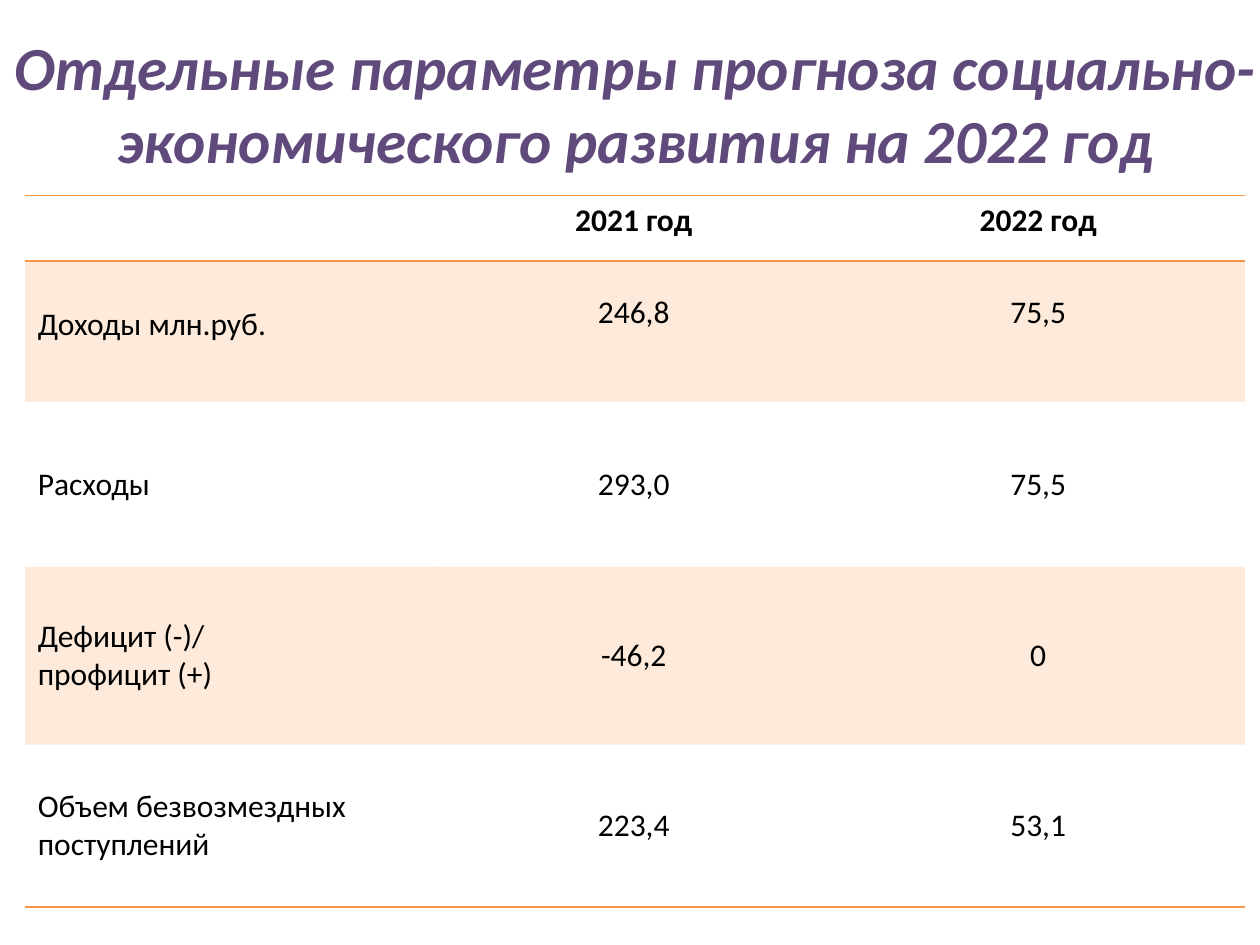
from dataclasses import dataclass

from lxml.etree import SubElement
from pptx import Presentation
from pptx.dml.color import RGBColor
from pptx.enum.text import MSO_ANCHOR, PP_ALIGN
from pptx.oxml import parse_xml
from pptx.oxml.ns import nsdecls, qn
from pptx.util import Inches, Pt


@dataclass(frozen=True)
class Theme:
    font: str = "Calibri"
    title: str = "604A7B"
    text: str = "000000"
    accent: str = "F79646"
    band_alpha: int = 20000
    title_size: int = 35
    body_size: int = 18
    rule_width: int = 1
    plain_table: str = "{2D5ABB26-0587-4C30-8999-92F81FD0307C}"


class SlideBuilder:
    def __init__(self, slide, theme):
        self.slide = slide
        self.theme = theme

    def style(self, p, size, color, align, bold=False, italic=False):
        p.alignment = align
        p.font.name = self.theme.font
        p.font.size = Pt(size)
        p.font.color.rgb = RGBColor.from_string(color)
        p.font.bold = bold
        p.font.italic = italic

    def title(self, text, x, y, w, h):
        sp = self.slide.shapes.add_textbox(Inches(x), Inches(y), Inches(w), Inches(h))
        tf = sp.text_frame
        tf.word_wrap = True
        tf.text = text
        self.style(tf.paragraphs[0], self.theme.title_size, self.theme.title,
                   PP_ALIGN.CENTER, True, True)

    def band(self, cell):
        cell.fill.solid()
        cell.fill.fore_color.rgb = RGBColor.from_string(self.theme.accent)
        color = cell.fill._xPr.find(".//" + qn("a:srgbClr"))
        SubElement(color, qn("a:alpha"), val=str(self.theme.band_alpha))

    def rules(self, cell, sides):
        tc_pr = cell._tc.get_or_add_tcPr()
        for i, side in enumerate(sides):
            tc_pr.insert(i, parse_xml(
                f'<a:ln{side} {nsdecls("a")} w="{Pt(self.theme.rule_width)}">'
                f'<a:solidFill><a:srgbClr val="{self.theme.accent}"/></a:solidFill>'
                f'</a:ln{side}>'))

    def table(self, rows, x, y, widths, heights):
        frame = self.slide.shapes.add_table(
            len(rows), len(widths), Inches(x), Inches(y),
            Inches(sum(widths)), Inches(sum(heights)))
        frame.element.find(".//" + qn("a:tableStyleId")).text = self.theme.plain_table
        table = frame.table
        for column, width in zip(table.columns, widths):
            column.width = Inches(width)
        for row, height in zip(table.rows, heights):
            row.height = Inches(height)
        rule_sides = {0: "TB", len(rows) - 1: "B"}
        for i, values in enumerate(rows):
            for j, value in enumerate(values):
                cell = table.cell(i, j)
                cell.text = value
                cell.vertical_anchor = MSO_ANCHOR.MIDDLE if i else MSO_ANCHOR.TOP
                align = PP_ALIGN.CENTER if j else PP_ALIGN.LEFT
                for p in cell.text_frame.paragraphs:
                    self.style(p, self.theme.body_size, self.theme.text, align, i == 0)
                if i % 2:
                    self.band(cell)
                else:
                    cell.fill.background()
                self.rules(cell, rule_sides.get(i, ""))
        return table


def main():
    prs = Presentation()
    prs.slide_width, prs.slide_height = Inches(10), Inches(7.5)
    s = prs.slides.add_slide(prs.slide_layouts[6])
    builder = SlideBuilder(s, Theme())
    rows = [
        ("", "2021 год", "2022 год"),
        ("Доходы млн.руб.", "246,8", "75,5"),
        ("Расходы", "293,0", "75,5"),
        ("Дефицит (-)/\nпрофицит (+)", "-46,2", "0"),
        ("Объем безвозмездных поступлений", "223,4", "53,1"),
    ]
    table = builder.table(rows, 0.2, 1.55, (3.26, 3.14, 3.28),
                          (0.52, 1.12, 1.31, 1.41, 1.29))
    for cell, margin in zip(table.rows[1].cells, (0.15, 0.35, 0.35)):
        cell.margin_bottom = Inches(margin)
    builder.title("Отдельные параметры прогноза социально-экономического "
                  "развития на 2022 год", -0.43, 0.18, 10.95, 0.62)
    prs.save("out.pptx")


if __name__ == "__main__":
    main()
